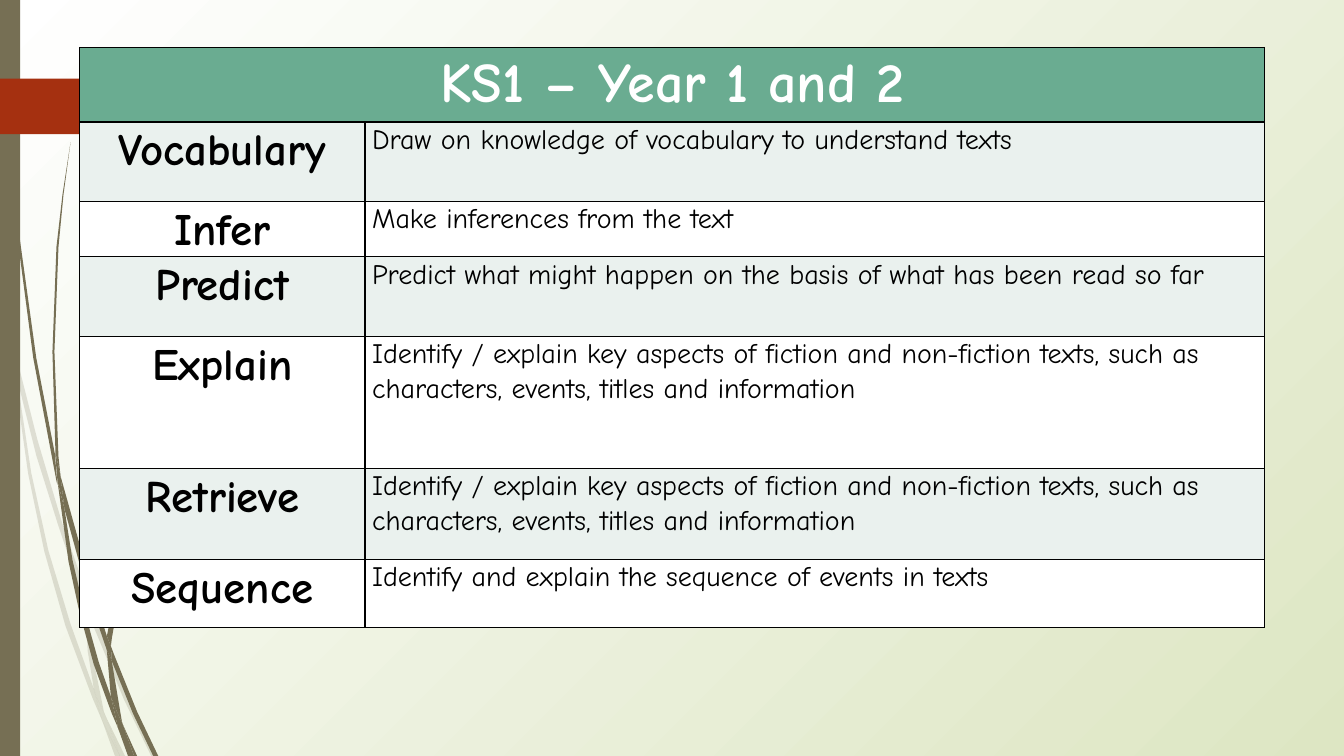
"""Build the KS1 reading skills slide: a table over a background of curved grass strands."""
from lxml.etree import SubElement
from pptx import Presentation
from pptx.dml.color import RGBColor
from pptx.enum.shapes import MSO_SHAPE as SHAPE
from pptx.enum.text import PP_ALIGN as ALIGN
from pptx.oxml import parse_xml
from pptx.oxml.ns import nsdecls, qn
from pptx.util import Inches, Pt

FONT = "Comic Neue"
OLIVE, RED, GREEN, PALE = "766F54", "A53010", "6AAC91", "EAF1EE"
WHITE, BLACK, LIME = "FFFFFF", "000000", "DDE6C3"

TITLE = "KS1 – Year 1 and 2"
KEY_ASPECTS = ("Identify / explain key aspects of fiction and non-fiction texts, "
               "such as characters, events, titles and information")
SKILLS = [
    ("Vocabulary", "Draw on knowledge of vocabulary to understand texts", 0.79),
    ("Infer", "Make inferences from the text", 0.54),
    ("Predict", "Predict what might happen on the basis of what has been read so far", 0.79),
    ("Explain", KEY_ASPECTS, 1.31),
    ("Retrieve", KEY_ASPECTS, 0.9),
    ("Sequence", "Identify and explain the sequence of events in texts", 0.68),
]
TABLE_LEFT, TABLE_TOP, TITLE_HEIGHT = 0.79, 0.47, 0.74
COLUMNS = [2.83, 8.92]

FAINT_BLADES = [
    [(0.11, 3.5), (0.09, 3.22), (0, 2.82), (0, 2.99), (0.1, 3.44)],
    [(0.58, 5.22), (0.84, 5.99), (0.85, 5.86), (0.62, 5.2), (0.37, 4.36), (0.14, 3.45),
     (0.17, 3.76), (0.36, 4.52)],
    [(0.92, 6.07), (0.88, 5.96), (0.88, 6.1), (1.23, 6.94), (1.5, 7.5), (1.55, 7.5),
     (1.27, 6.92)],
    [(1.19, 7.5), (1.24, 7.5), (1.05, 7.11)],
    [(0.93, 6.83), (0.7, 6.19), (0.48, 5.46), (0.31, 4.69), (0.17, 3.76), (0.11, 3.5),
     (0.28, 4.7), (0.44, 5.47), (0.65, 6.21), (0.92, 6.93), (1.01, 7.14), (0.99, 7.07)],
    [(0.84, 5.99), (0.87, 6.46), (0.93, 6.83), (0.96, 6.92), (1.05, 7.11), (1.03, 7.06),
     (0.91, 6.46), (0.88, 6.1), (0.88, 6.08)],
    [(0.88, 5.84), (1.1, 4.62), (1.6, 3.49), (2.29, 2.45), (2.68, 1.98), (3.12, 1.54),
     (3.12, 1.53), (2.68, 1.97), (2.28, 2.44), (1.58, 3.48), (1.07, 4.61), (0.85, 5.84),
     (0.85, 5.86), (0.88, 5.96)],
    [(1.01, 7.14), (1.14, 7.5), (1.19, 7.5)],
    [(0.88, 6.08), (0.88, 6.1), (0.88, 5.96), (0.85, 5.86), (0.84, 5.99)],
    [(0.96, 6.92), (0.93, 6.83), (0.99, 7.07), (1.01, 7.14), (1.19, 7.5), (1.05, 7.11)],
]
BLADES = [
    [(0.07, 1.1), (0.17, 2.33), (0.33, 3.55), (0.56, 4.77), (0.57, 4.81), (0.55, 4.57),
     (0.55, 4.53), (0.36, 3.55), (0.19, 2.32), (0.08, 1.09), (0.05, 0.48), (0.04, 0),
     (0.03, 0), (0.04, 0.48)],
    [(0.88, 5.92), (1.06, 6.45), (1.06, 6.31), (0.93, 5.9), (0.6, 4.72), (0.64, 5.05)],
    [(1.13, 6.49), (1.1, 6.41), (1.11, 6.56), (1.32, 7.08), (1.52, 7.5), (1.57, 7.5),
     (1.36, 7.06)],
    [(1.1, 6.91), (0.98, 6.57), (0.84, 6.07), (0.72, 5.56), (0.64, 5.05), (0.57, 4.77),
     (0.68, 5.57), (0.79, 6.08), (0.93, 6.59), (1.11, 7.08), (1.17, 7.22), (1.16, 7.17)],
    [(0.6, 4.72), (0.58, 4.53), (0.54, 3.49), (0.58, 2.45), (0.63, 1.93), (0.7, 1.41),
     (0.62, 1.93), (0.56, 2.45), (0.52, 3.49), (0.55, 4.49)],
    [(1.33, 7.5), (1.36, 7.5), (1.22, 7.19)],
    [(0.57, 4.77), (0.64, 5.05), (0.6, 4.72), (0.55, 4.49), (0.55, 4.53)],
    [(1.11, 6.33), (1.25, 5.52), (1.58, 4.76), (2.05, 4.06), (2.31, 3.74), (2.61, 3.44),
     (2.31, 3.73), (2.04, 4.05), (1.56, 4.74), (1.22, 5.51), (1.06, 6.31), (1.1, 6.41)],
    [(1.17, 7.22), (1.27, 7.5), (1.31, 7.5)],
    [(1.06, 6.45), (1.1, 6.91), (1.16, 7.06), (1.22, 7.19), (1.21, 7.16), (1.11, 6.56),
     (1.09, 6.51)],
    [(1.06, 6.45), (1.09, 6.51), (1.11, 6.56), (1.1, 6.41), (1.06, 6.31)],
    [(1.16, 7.06), (1.1, 6.91), (1.16, 7.17), (1.17, 7.22), (1.3, 7.5), (1.33, 7.5),
     (1.22, 7.19)],
]


def rgb(value):
    return RGBColor.from_string(value)


def paint(sp, color, alpha=None):
    sp.shadow.inherit = False
    sp.fill.solid()
    sp.fill.fore_color.rgb = rgb(color)
    sp.line.fill.background()
    if alpha:
        clr = sp._element.spPr.find(qn("a:solidFill"))[0]
        SubElement(clr, qn("a:alpha")).set("val", str(alpha * 1000))


def add_blade(slide, points, alpha=None):
    outline = [(Inches(x), Inches(y)) for x, y in points]
    builder = slide.shapes.build_freeform(*outline[0])
    builder.add_line_segments(outline[1:])
    paint(builder.convert_to_shape(), OLIVE, alpha)


def set_background(slide):
    fill = slide.background.fill
    fill.gradient()
    for stop, color in zip(fill.gradient_stops, (WHITE, LIME)):
        stop.color.rgb = rgb(color)
    grad = slide._element.find(".//" + qn("a:gradFill"))
    grad.replace(grad.find(qn("a:lin")), parse_xml(
        f'<a:path {nsdecls("a")} path="circle"><a:fillToRect r="100000" b="100000"/></a:path>'))


def style_cell(cell, text, size, fill, color=BLACK, bold=True, align=ALIGN.CENTER):
    cell.margin_left = cell.margin_right = Inches(0.07)
    cell.margin_top = cell.margin_bottom = 0
    cell.fill.solid()
    cell.fill.fore_color.rgb = rgb(fill)
    cell.text_frame.text = text
    p = cell.text_frame.paragraphs[0]
    p.alignment = align
    p.line_spacing = 1.07
    for r in p.runs:
        r.font.name, r.font.size, r.font.bold = FONT, Pt(size), bold
        r.font.color.rgb = rgb(color)


def add_borders(cell):
    for i, side in enumerate("LRTB"):
        cell._tc.get_or_add_tcPr().insert(i, parse_xml(
            f'<a:ln{side} {nsdecls("a")} w="12700"><a:solidFill>'
            f'<a:srgbClr val="{BLACK}"/></a:solidFill></a:ln{side}>'))


def add_skills_table(slide):
    heights = [TITLE_HEIGHT] + [height for _, _, height in SKILLS]
    table = slide.shapes.add_table(
        len(heights), len(COLUMNS), Inches(TABLE_LEFT), Inches(TABLE_TOP),
        Inches(sum(COLUMNS)), Inches(sum(heights))).table
    for column, width in zip(table.columns, COLUMNS):
        column.width = Inches(width)
    for row, height in zip(table.rows, heights):
        row.height = Inches(height)
    table.cell(0, 0).merge(table.cell(0, 1))
    style_cell(table.cell(0, 0), TITLE, 40, GREEN, WHITE)
    for i, (skill, aim, _) in enumerate(SKILLS, 1):
        fill = PALE if i % 2 else WHITE
        style_cell(table.cell(i, 0), skill, 32, fill)
        style_cell(table.cell(i, 1), aim, 20, fill, bold=False, align=ALIGN.LEFT)
    for cell in table.iter_cells():
        add_borders(cell)


def main():
    prs = Presentation()
    prs.slide_width, prs.slide_height = Inches(13.33), Inches(7.5)
    slide = prs.slides.add_slide(prs.slide_layouts[6])
    set_background(slide)
    for points in FAINT_BLADES:
        add_blade(slide, points, alpha=20)
    for points in BLADES:
        add_blade(slide, points)
    for kind, top, width, height, color in [
        (SHAPE.RECTANGLE, 0, 0.2, 7.5, OLIVE),
        (SHAPE.PENTAGON, 0.78, 1.74, 0.55, RED),
    ]:
        sp = slide.shapes.add_shape(kind, 0, Inches(top), Inches(width), Inches(height))
        paint(sp, color)
    add_skills_table(slide)
    prs.save("out.pptx")


if __name__ == "__main__":
    main()
